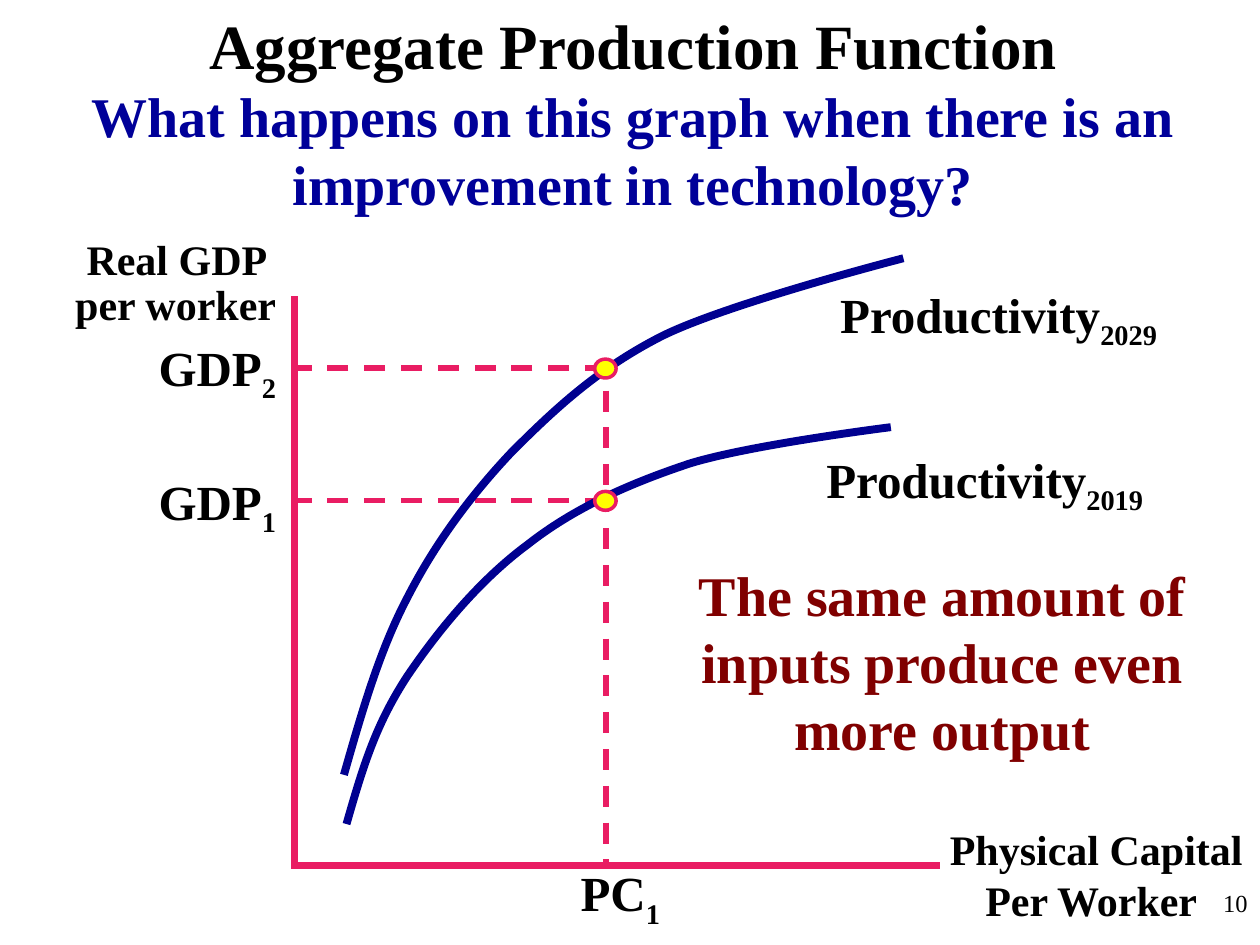
from lxml.etree import SubElement
from pptx import Presentation
from pptx.dml.color import RGBColor
from pptx.enum.dml import MSO_LINE_DASH_STYLE as Dash
from pptx.enum.shapes import MSO_CONNECTOR as Connector, MSO_SHAPE as Shape
from pptx.enum.text import PP_ALIGN as Align
from pptx.oxml.ns import qn
from pptx.util import Pt

PX = 9144
FONT = "Times New Roman"
BLACK = RGBColor(0x00, 0x00, 0x00)
BLUE = RGBColor(0x00, 0x00, 0x99)
NAVY = RGBColor(0x00, 0x00, 0x90)
PINK = RGBColor(0xE9, 0x1D, 0x63)
YELLOW = RGBColor(0xFF, 0xFF, 0x00)
MAROON = RGBColor(0x80, 0x00, 0x00)

TITLE = [("Aggregate Production Function", 36, BLACK),
         ("What happens on this graph when there is an improvement in technology?", 32, BLUE)]
CAPTIONS = [
    ("Physical Capital Per Worker ", (738, 649, 264, 50), 24, BLACK, None),
    ("Real GDP per worker", (46, 185, 187, 83), 24, BLACK, 0.9),
    ("The same amount of inputs produce even more output", (530, 440, 436, 57), 32, MAROON, None),
]
LABELS = [
    ("PC", "1", (451, 680, 90, 57)),
    ("Productivity", "2019", (646, 352, 292, 57)),
    ("Productivity", "2029", (657, 221, 292, 57)),
    ("GDP", "2", (116, 263, 115, 57)),
    ("GDP", "1", (116, 369, 115, 57)),
]
AXIS_X, AXIS_Y, CAPITAL = 234, 687, 481
GDP_LEVELS = [292, 397]
AXES = [(AXIS_X, 235, AXIS_X, 690), (231, AXIS_Y, 746, AXIS_Y)]
GUIDES = [(CAPITAL, 390, CAPITAL, AXIS_Y), (CAPITAL, 310, CAPITAL, 394)]
GUIDES += [(CAPITAL, y, AXIS_X, y) for y in GDP_LEVELS]
CURVES = [
    [(275, 654), (289, 605), (299, 574), (323, 537), (348, 500), (381, 460), (419, 432),
     (456, 403), (499, 384), (547, 368), (595, 353), (707, 339), (707, 339)],
    [(273, 615), (287, 566), (301, 517), (323, 475), (345, 432), (373, 394), (406, 359),
     (440, 325), (474, 293), (525, 267), (577, 241), (717, 205), (717, 205)],
]
DOT_W, DOT_H = 17, 15

prs = Presentation()
prs.slide_width, prs.slide_height = 1000 * PX, 750 * PX
s = prs.slides.add_slide(prs.slide_layouts[6])


def emu(values):
    return [v * PX for v in values]


def add_box(box):
    tf = s.shapes.add_textbox(*emu(box)).text_frame
    tf.word_wrap = True
    return tf


def add_text(p, text, size=28, color=BLACK, bold=True, align=None, spacing=None, sub=False):
    p.alignment, p.line_spacing = align, spacing
    r = p.add_run()
    r.text = text
    r.font.name, r.font.size, r.font.bold = FONT, Pt(size), bold
    r.font.color.rgb = color
    if sub:
        r._r.get_or_add_rPr().set("baseline", "-25000")


def add_line(shapes, ends, width, dash=None):
    sp = shapes.add_connector(Connector.STRAIGHT, *emu(ends))
    sp.line.color.rgb, sp.line.width = PINK, Pt(width)
    if dash:
        sp.line.dash_style = dash
    SubElement(sp._element.spPr, qn("a:effectLst"))


def add_curve(knots):
    fb = s.shapes.build_freeform(*emu(knots[0]), scale=1)
    fb.add_line_segments([emu(knot) for knot in knots[1:]], close=False)
    sp = fb.convert_to_shape()
    path = next(sp._element.iter(qn("a:path")))
    lines = path.findall(qn("a:lnTo"))
    for i in range(0, len(lines), 3):
        bezier = SubElement(path, qn("a:cubicBezTo"))
        for line in lines[i:i + 3]:
            bezier.append(line[0])
            path.remove(line)
    sp.shadow.inherit = False
    sp.fill.background()
    sp.line.color.rgb, sp.line.width = NAVY, Pt(4.5)


def add_dot(y):
    corner = (CAPITAL - 9, y - 7)
    sp = s.shapes.add_shape(Shape.FLOWCHART_CONNECTOR, *emu((*corner, DOT_W, DOT_H)))
    sp.shadow.inherit = False
    sp.fill.solid()
    sp.fill.fore_color.rgb = YELLOW
    sp.line.color.rgb, sp.line.width = PINK, Pt(2)


axes = s.shapes.add_group_shape()
for ends in AXES:
    add_line(axes.shapes, ends, 4)

add_text(add_box((792, 700, 208, 50)).paragraphs[0], "10", size=14, bold=False, align=Align.RIGHT)

tf = add_box((4, 0, 997, 228))
for i, (text, size, color) in enumerate(TITLE):
    p = tf.add_paragraph() if i else tf.paragraphs[0]
    add_text(p, text, size=size, color=color, align=Align.CENTER)

for text, box, size, color, spacing in CAPTIONS:
    add_text(add_box(box).paragraphs[0], text, size=size, color=color,
             align=Align.CENTER, spacing=spacing)

for name, index, box in LABELS:
    p = add_box(box).paragraphs[0]
    add_text(p, name)
    add_text(p, index, sub=True)

for ends in GUIDES:
    add_line(s.shapes, ends, 3, Dash.DASH)
for knots in CURVES:
    add_curve(knots)
for y in GDP_LEVELS:
    add_dot(y)

prs.save("out.pptx")
